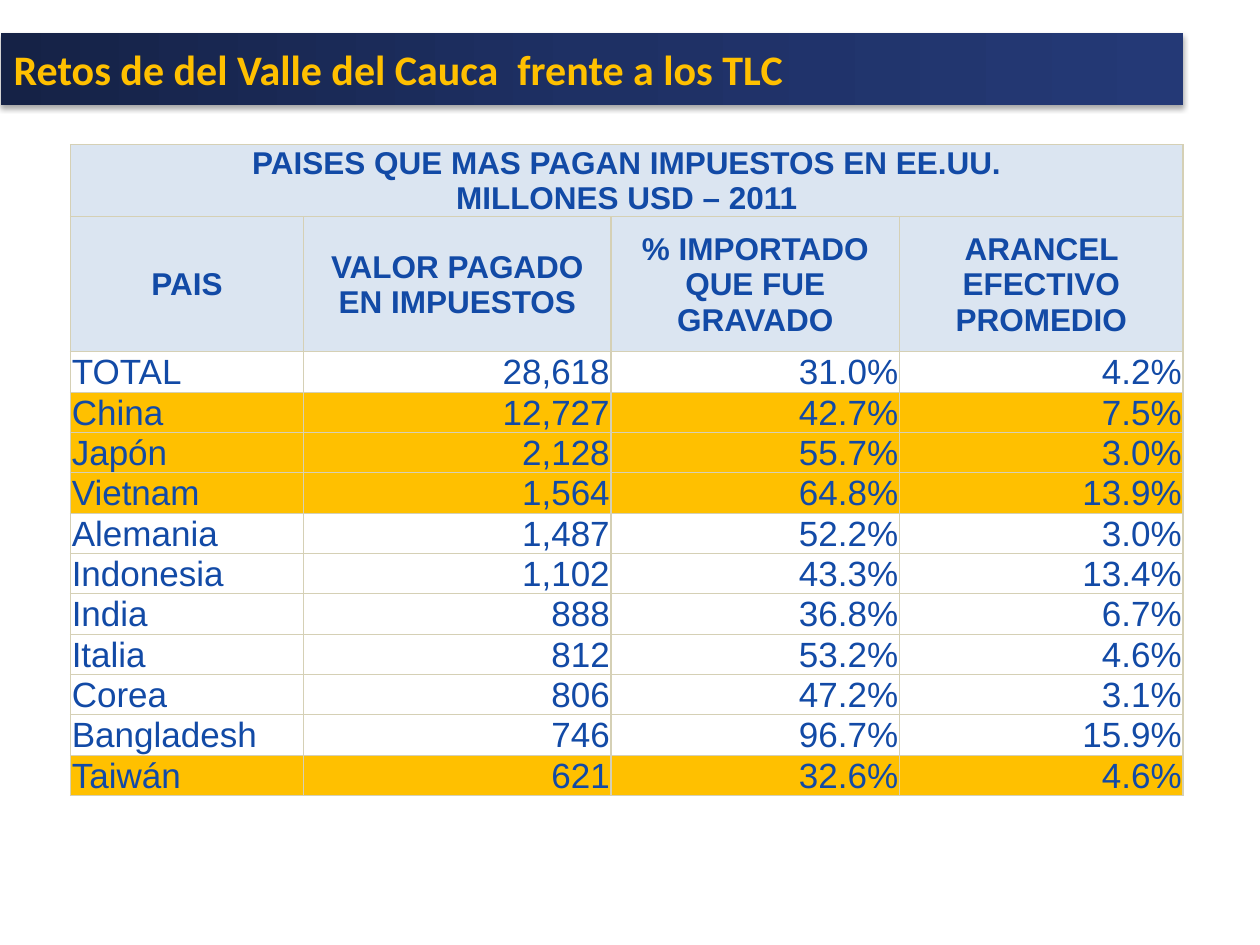
import copy
from dataclasses import dataclass

import lxml.etree
import pptx
import pptx.dml.color
import pptx.enum.shapes
import pptx.enum.text
import pptx.oxml
import pptx.oxml.ns
import pptx.util

WIDE = pptx.util.Inches(10)
HIGH = pptx.util.Inches(7.5)
HUES = {
    "ink": "124AA6",
    "head": "DBE5F1",
    "gold": "FFC000",
    "rule": "D5D0B5",
    "dark": "152246",
    "mid": "1E3064",
    "light": "243976",
    "shade": "000000",
}
COLS = (18.5, 24.4, 22.9, 22.5)
TITLE_ROW, HEAD_ROW, DATA_ROW = 7.6, 14.3, 4.27
ALIGN = pptx.enum.text.PP_ALIGN
MAIN = "PAISES QUE MAS PAGAN IMPUESTOS EN EE.UU.\vMILLONES USD – 2011"
HEADS = (
    "PAIS",
    "VALOR PAGADO EN IMPUESTOS",
    "% IMPORTADO QUE FUE GRAVADO",
    "ARANCEL EFECTIVO PROMEDIO",
)


@dataclass
class Land:
    name: str
    paid: int
    share: float
    rate: float
    gold: bool = False

    def texts(self) -> tuple[str, ...]:
        return self.name, f"{self.paid:,}", f"{self.share:.1f}%", f"{self.rate:.1f}%"


LANDS = (
    Land("TOTAL", 28618, 31.0, 4.2),
    Land("China", 12727, 42.7, 7.5, True),
    Land("Japón", 2128, 55.7, 3.0, True),
    Land("Vietnam", 1564, 64.8, 13.9, True),
    Land("Alemania", 1487, 52.2, 3.0),
    Land("Indonesia", 1102, 43.3, 13.4),
    Land("India", 888, 36.8, 6.7),
    Land("Italia", 812, 53.2, 4.6),
    Land("Corea", 806, 47.2, 3.1),
    Land("Bangladesh", 746, 96.7, 15.9),
    Land("Taiwán", 621, 32.6, 4.6, True),
)


def across(share: float) -> int:
    return round(WIDE * share / 100)


def down(share: float) -> int:
    return round(HIGH * share / 100)


def color(name: str) -> pptx.dml.color.RGBColor:
    return pptx.dml.color.RGBColor.from_string(HUES[name])


def write(frame, text: str, *, size: int, font="Arial", hue="ink", bold=False, align=ALIGN.LEFT) -> None:
    frame.word_wrap = True
    para = frame.paragraphs[0]
    para.text = text
    para.alignment = align
    for run in para.runs:
        run.font.size = pptx.util.Pt(size)
        run.font.name = font
        run.font.bold = bold
        run.font.color.rgb = color(hue)


def edge(cell) -> None:
    space = pptx.oxml.ns.nsdecls("a")
    props = cell._tc.get_or_add_tcPr()
    for spot, side in enumerate("LRTB"):
        line = pptx.oxml.parse_xml(
            f'<a:ln{side} {space} w="9525"><a:solidFill>'
            f'<a:srgbClr val="{HUES["rule"]}"/></a:solidFill></a:ln{side}>'
        )
        props.insert(spot, line)


def dress(cell, hue: str | None) -> None:
    cell.margin_left = cell.margin_right = cell.margin_top = pptx.util.Inches(0.01)
    cell.margin_bottom = 0
    cell.vertical_anchor = pptx.enum.text.MSO_ANCHOR.MIDDLE
    if hue:
        cell.fill.solid()
        cell.fill.fore_color.rgb = color(hue)
    else:
        cell.fill.background()
    edge(cell)


def draw_table(slide) -> None:
    rows = (TITLE_ROW, HEAD_ROW) + (DATA_ROW,) * len(LANDS)
    frame = slide.shapes.add_table(
        len(rows), len(COLS), across(5.6), down(15.33), across(sum(COLS)), down(sum(rows))
    )
    table = frame.table
    table.first_row = table.horz_banding = False
    for col, share in zip(table.columns, COLS):
        col.width = across(share)
    for row, share in zip(table.rows, rows):
        row.height = down(share)
    hues = ["head", "head"] + ["gold" if land.gold else None for land in LANDS]
    for row, hue in zip(table.rows, hues):
        for cell in row.cells:
            dress(cell, hue)
    top = table.cell(0, 0)
    top.merge(table.cell(0, len(COLS) - 1))
    write(top.text_frame, MAIN, size=18, bold=True, align=ALIGN.CENTER)
    for col, text in enumerate(HEADS):
        write(table.cell(1, col).text_frame, text, size=18, bold=True, align=ALIGN.CENTER)
    for row, land in enumerate(LANDS, 2):
        for col, text in enumerate(land.texts()):
            align = ALIGN.RIGHT if col else ALIGN.LEFT
            write(table.cell(row, col).text_frame, text, size=20, align=align)


def blend(shape, names: tuple[str, ...]) -> None:
    shape.fill.gradient()
    shape.fill.gradient_angle = 0
    stops = shape._element.spPr.find(".//" + pptx.oxml.ns.qn("a:gsLst"))
    while len(stops) < len(names):
        stops.append(copy.deepcopy(stops[0]))
    for spot, (stop, name) in enumerate(zip(shape.fill.gradient_stops, names)):
        stop.position = spot / (len(names) - 1)
        stop.color.rgb = color(name)


def shade(shape) -> None:
    shape.shadow.inherit = False
    glow = shape._element.spPr.find(pptx.oxml.ns.qn("a:effectLst"))
    drop = lxml.etree.SubElement(
        glow, pptx.oxml.ns.qn("a:outerShdw"),
        blurRad="38100", dist="25400", dir="5400000", rotWithShape="0",
    )
    tint = lxml.etree.SubElement(drop, pptx.oxml.ns.qn("a:srgbClr"), val=HUES["shade"])
    lxml.etree.SubElement(tint, pptx.oxml.ns.qn("a:alpha"), val="35000")


def draw_bar(slide) -> None:
    bar = slide.shapes.add_shape(
        pptx.enum.shapes.MSO_SHAPE.RECTANGLE, across(0.1), down(3.47), across(93.8), down(7.6)
    )
    blend(bar, ("dark", "mid", "light"))
    bar.line.fill.background()
    shade(bar)
    bar.text_frame.vertical_anchor = pptx.enum.text.MSO_ANCHOR.MIDDLE
    write(
        bar.text_frame, "Retos de del Valle del Cauca  frente a los TLC",
        size=24, font="Calibri", hue="gold", bold=True,
    )


def main() -> None:
    deck = pptx.Presentation()
    deck.slide_width, deck.slide_height = WIDE, HIGH
    slide = deck.slides.add_slide(deck.slide_layouts[6])
    draw_table(slide)
    draw_bar(slide)
    deck.save("out.pptx")


if __name__ == "__main__":
    main()
